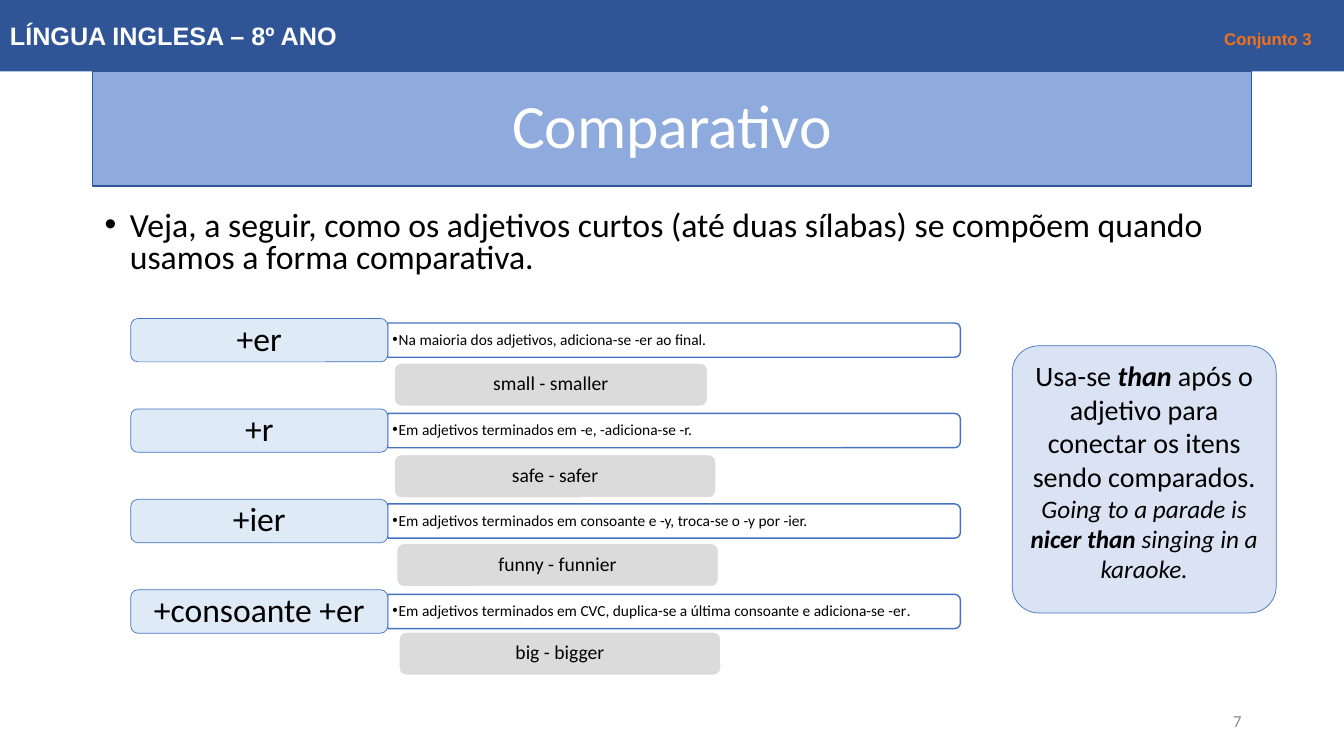
import pptx
import pptx.util
import pptx.dml.color
import pptx.enum.shapes
import pptx.enum.text
import pptx.oxml.ns
import lxml.etree

Pt = pptx.util.Pt
RGBColor = pptx.dml.color.RGBColor
SHAPE = pptx.enum.shapes.MSO_SHAPE
ALIGN = pptx.enum.text.PP_ALIGN
ANCHOR = pptx.enum.text.MSO_ANCHOR

WHITE = RGBColor(0xFF, 0xFF, 0xFF)
BLACK = RGBColor(0, 0, 0)
NAVY = RGBColor(0x2F, 0x55, 0x97)
TITLE_BLUE = RGBColor(0x8F, 0xAA, 0xDC)
OUTLINE_BLUE = RGBColor(0x44, 0x72, 0xC4)
LABEL_BLUE = RGBColor(0xDE, 0xEB, 0xF7)
NOTE_BLUE = RGBColor(0xDA, 0xE3, 0xF3)
CHIP_GREY = RGBColor(0xDB, 0xDB, 0xDB)
NUMBER_GREY = RGBColor(0x8C, 0x8C, 0x8C)
ORANGE = RGBColor(0xF4, 0x71, 0x16)

# Each paragraph is a list of (text, font values)
BANNER = [[("LÍNGUA INGLESA – 8º ANO\t", {"size": Pt(18)}), ("Conjunto 3", {"size": Pt(12), "color": ORANGE})]]
TITLE = [[("Comparativo", {})]]
INTRO = [[("Veja, a seguir, como os adjetivos curtos (até duas sílabas) se compõem "
           "quando usamos a forma comparativa.", {})]]
# Ending, rule, example, example box (left, top, width)
RULES = [
    ("+er", [("Na maioria dos adjetivos, adiciona-se -er ao final.", {})],
     "small - smaller", (281.5, 259.2, 224)),
    ("+r", [("Em adjetivos terminados em -e, -adiciona-se -r.", {})],
     "safe - safer", (281.5, 324.7, 230)),
    ("+ier", [("Em adjetivos terminados em consoante e -y, troca-se o -y por -ier.", {})],
     "funny - funnier", (283.3, 388.1, 230)),
    ("+consoante +er",
     [("Em adjetivos terminados em CVC, duplica-se a última consoante e adiciona-se -er", {}),
      (".", {"italic": True})],
     "big - bigger", (285, 451.4, 230)),
]
NOTE = [
    [("Usa-se ", {}), ("than", {"bold": True, "italic": True}),
     (" após o adjetivo para conectar os itens sendo comparados.", {})],
    [("Going to a parade is ", {"size": Pt(18), "italic": True}),
     ("nicer than ", {"size": Pt(18), "italic": True, "bold": True}),
     ("singing in a karaoke.", {"size": Pt(18), "italic": True})],
]
PAGE_NUMBER = [[("7", {})]]

LABEL_LEFT, LABEL_TOP, LABEL_WIDTH, LABEL_HEIGHT = 93.4, 227.5, 183.6, 31
ROW_STEP = 64.6
BAR_LEFT, BAR_WIDTH, BAR_HEIGHT = 277, 409, 24.5


def write(shape, paragraphs, size, color=BLACK, name="Calibri", bold=False, align=ALIGN.CENTER,
          anchor=ANCHOR.MIDDLE, spacing=0.9, margins=(7.2, 3.6)):
    frame = shape.text_frame
    side, edge = margins
    frame_format = {"word_wrap": True, "auto_size": pptx.enum.text.MSO_AUTO_SIZE.NONE,
                    "vertical_anchor": anchor, "margin_left": Pt(side), "margin_right": Pt(side),
                    "margin_top": Pt(edge), "margin_bottom": Pt(edge)}
    for key, value in frame_format.items():
        setattr(frame, key, value)
    for index, spans in enumerate(paragraphs):
        para = frame.add_paragraph() if index else frame.paragraphs[0]
        para.alignment, para.line_spacing = align, spacing
        for text, values in spans:
            span = para.add_run()
            span.text = text
            font_format = {"size": Pt(size), "name": name, "bold": bold, "color": color, **values}
            span.font.color.rgb = font_format.pop("color")
            for key, value in font_format.items():
                setattr(span.font, key, value)


def paint(shape, fill, line=None, width=1):
    shape.fill.solid()
    shape.fill.fore_color.rgb = fill
    if line is None:
        shape.line.fill.background()
    else:
        shape.line.color.rgb = line
        shape.line.width = Pt(width)


def add_box(page, kind, box, fill, line=None, width=1):
    shape = page.shapes.add_shape(kind, *map(Pt, box))
    shape.shadow.inherit = False
    paint(shape, fill, line, width)
    return shape


def add_text(page, box, paragraphs, size, **options):
    shape = page.shapes.add_textbox(*map(Pt, box))
    write(shape, paragraphs, size, **options)
    return shape


def add_bullet(shape, indent):
    properties = shape.text_frame.paragraphs[0]._p.get_or_add_pPr()
    properties.set("marL", str(Pt(indent)))
    properties.set("indent", str(-Pt(indent)))
    qn = pptx.oxml.ns.qn
    lxml.etree.SubElement(properties, qn("a:buFont")).set("typeface", "Arial")
    lxml.etree.SubElement(properties, qn("a:buChar")).set("char", "•")


def add_right_tab(shape, position):
    properties = shape.text_frame.paragraphs[0]._p.get_or_add_pPr()
    qn = pptx.oxml.ns.qn
    stops = lxml.etree.SubElement(properties, qn("a:tabLst"))
    stop = lxml.etree.SubElement(stops, qn("a:tab"))
    stop.set("pos", str(Pt(position)))
    stop.set("algn", "r")


def add_rule(page, row, ending, rule, example, chip_place):
    top = LABEL_TOP + row * ROW_STEP
    middle = top + LABEL_HEIGHT / 2
    bar_top = middle - BAR_HEIGHT / 2

    # Turned a quarter so that the rounded corners face right
    center = BAR_LEFT + BAR_WIDTH / 2
    bar = add_box(page, SHAPE.ROUND_2_SAME_RECTANGLE,
                  (center - BAR_HEIGHT / 2, middle - BAR_WIDTH / 2, BAR_HEIGHT, BAR_WIDTH),
                  WHITE, OUTLINE_BLUE)
    bar.rotation = 90
    text = add_text(page, (BAR_LEFT, bar_top, BAR_WIDTH, BAR_HEIGHT), [rule], 11,
                    align=ALIGN.LEFT, margins=(3.3, 1.65))
    add_bullet(text, 4.5)

    label = add_box(page, SHAPE.ROUNDED_RECTANGLE, (LABEL_LEFT, top, LABEL_WIDTH, LABEL_HEIGHT),
                    LABEL_BLUE, OUTLINE_BLUE, 0.5)
    write(label, [[(ending, {})]], 24)

    chip = add_box(page, SHAPE.ROUNDED_RECTANGLE, (*chip_place, LABEL_HEIGHT), CHIP_GREY, WHITE)
    write(chip, [[(example, {})]], 14, margins=(4.4, 2.2))


def main():
    deck = pptx.Presentation()
    deck.slide_width, deck.slide_height = Pt(960), Pt(540)
    page = deck.slides.add_slide(deck.slide_layouts[5])

    title = page.shapes.title
    for key, value in zip(("left", "top", "width", "height"), (66, 51, 828, 82)):
        setattr(title, key, Pt(value))
    paint(title, TITLE_BLUE, NAVY)
    write(title, TITLE, 44, color=WHITE)

    intro = add_text(page, (67.7, 147.6, 803.5, 57), INTRO, 24.1, align=ALIGN.LEFT,
                     anchor=ANCHOR.TOP, spacing=0.8)
    intro.text_frame.paragraphs[0].space_before = Pt(10)
    add_bullet(intro, 18)

    add_text(page, (678, 500.5, 216, 28.8), PAGE_NUMBER, 12, color=NUMBER_GREY,
             align=ALIGN.RIGHT, spacing=1.0)

    banner = add_box(page, SHAPE.RECTANGLE, (0, 0, 960, 51), NAVY)
    write(banner, BANNER, 18, color=WHITE, name="Arial", bold=True, align=ALIGN.LEFT, spacing=1.0)
    add_right_tab(banner, 930)

    for row, rule in enumerate(RULES):
        add_rule(page, row, *rule)

    note = add_box(page, SHAPE.ROUNDED_RECTANGLE, (723, 247, 188.6, 190.8), NOTE_BLUE, OUTLINE_BLUE, 0.5)
    note.adjustments[0] = 0.1
    write(note, NOTE, 20, anchor=ANCHOR.TOP, spacing=1.0)

    deck.save("out.pptx")


if __name__ == "__main__":
    main()
